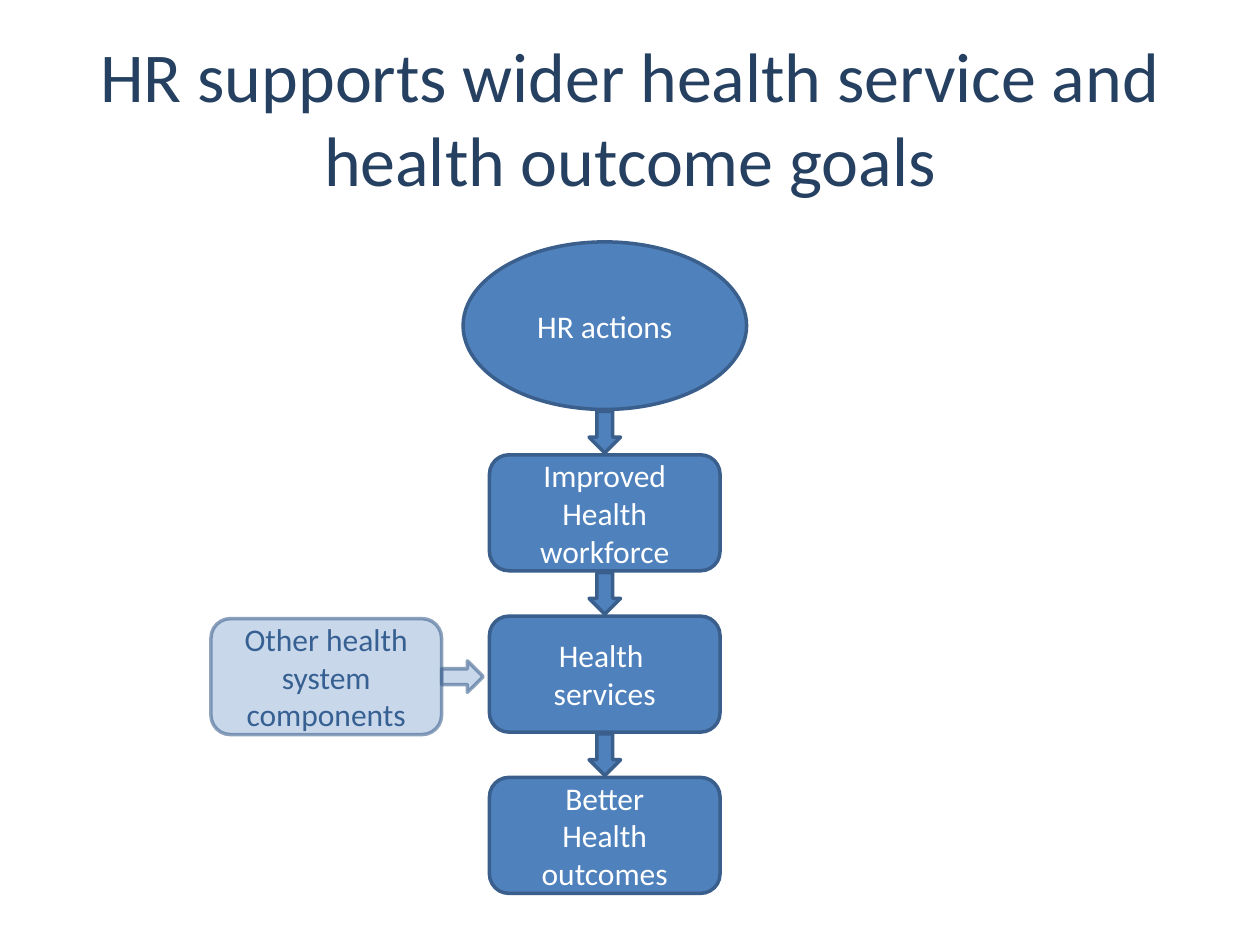
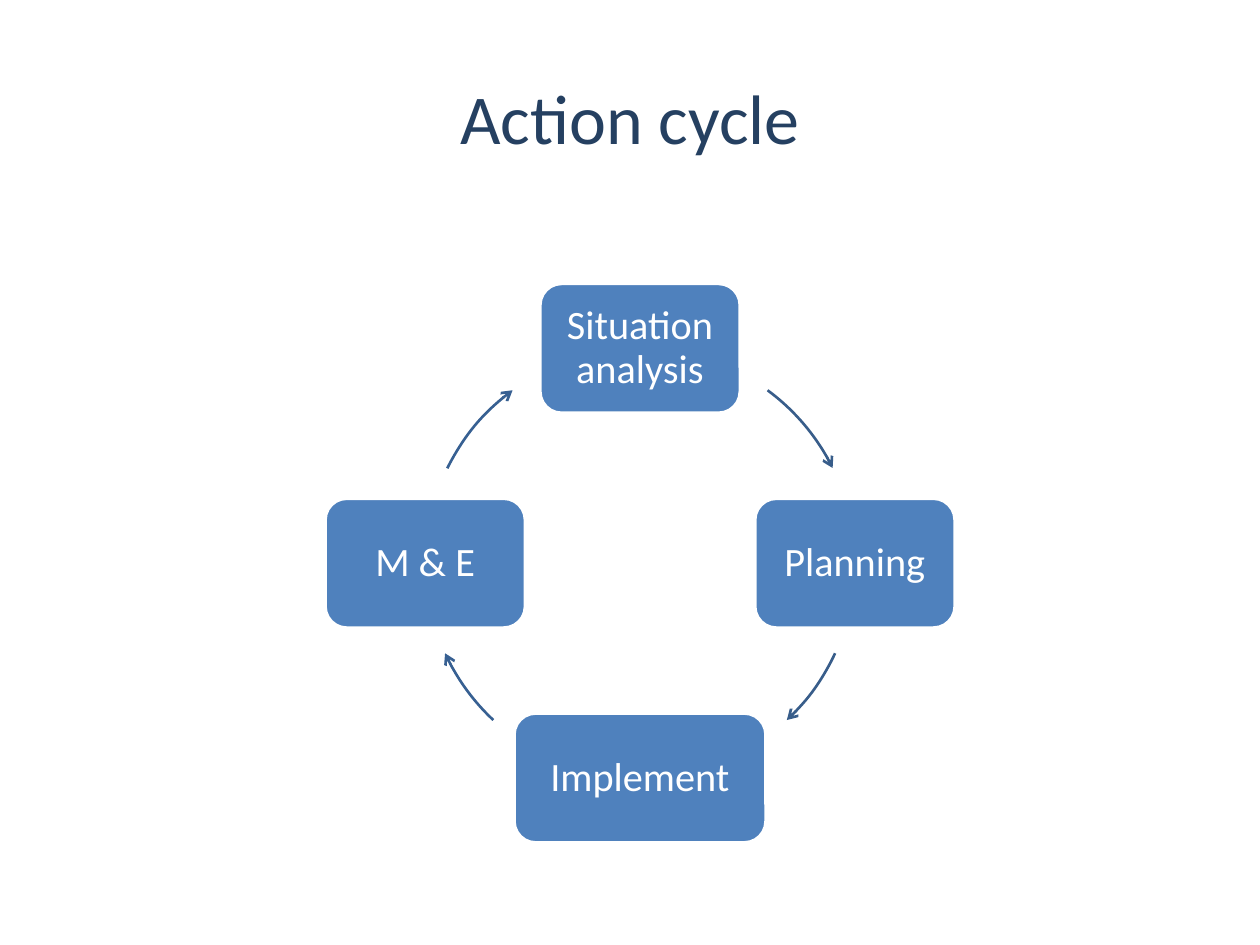
from dataclasses import dataclass

from lxml.etree import SubElement
from pptx import Presentation
from pptx.dml.color import RGBColor
from pptx.enum.shapes import MSO_SHAPE
from pptx.enum.text import MSO_ANCHOR, PP_ALIGN
from pptx.oxml.ns import qn
from pptx.util import Inches, Pt


@dataclass(frozen=True)
class Theme:
    """Colours and type sizes shared by the slides."""
    font: str = "Calibri"
    title: str = "254061"
    fill: str = "4F81BD"
    outline: str = "3A5F8C"
    side_outline: str = "385D8A"
    side_text: str = "376092"
    white: str = "FFFFFF"
    title_size: int = 40
    flow_size: int = 18
    cycle_size: int = 23


T = Theme()

# Content
FLOW_TITLE = "HR supports wider health service and health outcome goals"
FLOW_START = "HR actions"
FLOW_STEPS = ["Improved\nHealth\nworkforce", "Health \nservices", "Better\nHealth\noutcomes"]
SIDE_INPUT, SIDE_ROW = "Other health system components", 1

CYCLE_TITLE = "Action cycle"
# label, direction from the centre (x, y), box width,
# arrow to the next step (start and end in degrees, clockwise from east), arrow colour
CYCLE_STEPS = [
    ("Situation analysis", (0, -1), 1.59, (306.4, 333.7), T.side_outline),
    ("Planning", (1, 0), 1.59, (24.8, 46.9), T.side_outline),
    ("Implement", (0, 1), 2.0, (133.1, 155.2), T.side_text),
    ("M & E", (-1, 0), 1.59, (206.2, 233.6), T.side_text),
]

# Geometry in inches
FLOW_X, OVAL_Y, OVAL_W, OVAL_H = 4.8, 1.92, 2.25, 1.33
BOX_W, BOX_H, ROW_TOP, ROW_PITCH = 1.83, 0.92, 3.61, 1.28
ARROW_W, ARROW_H = 0.25, 0.33
SIDE_X, SIDE_ARROW_X, SIDE_DROP = 2.59, 3.67, 0.02
CYCLE_X, CYCLE_Y, CYCLE_R, CYCLE_BOX_H = 5.08, 4.47, 1.705, 1.03


def rgb(value):
    """Turn a hex string into a colour."""
    return RGBColor.from_string(value)


def format_text(tf, size, color):
    """Centre all paragraphs and set their font."""
    tf.word_wrap = True
    tf.vertical_anchor = MSO_ANCHOR.MIDDLE
    for p in tf.paragraphs:
        p.alignment = PP_ALIGN.CENTER
        for r in p.runs:
            r.font.name, r.font.size = T.font, Pt(size)
            r.font.color.rgb = rgb(color)


def add_centred(s, kind, x, y, w, h, fill=T.fill, line=T.outline, width=2):
    """Add a preset shape centred on x, y."""
    sp = s.shapes.add_shape(kind, Inches(x - w / 2), Inches(y - h / 2), Inches(w), Inches(h))
    sp.shadow.inherit = False
    if fill:
        sp.fill.solid()
        sp.fill.fore_color.rgb = rgb(fill)
    else:
        sp.fill.background()
    sp.line.color.rgb = rgb(line)
    sp.line.width = Pt(width)
    return sp


def label(sp, text, size, color=T.white):
    """Write text in a shape."""
    sp.text_frame.text = text
    format_text(sp.text_frame, size, color)


def fade(sp, fill_share=31, line_share=56):
    """Make the fill and line of a shape partly transparent."""
    props = sp._element.spPr
    line = props.find(qn("a:ln"))
    for parent, share in ((props, fill_share), (line, line_share)):
        color = parent.find(qn("a:solidFill")).find(qn("a:srgbClr"))
        SubElement(color, qn("a:alpha"), val=str(share * 1000))


def add_slide(prs, title):
    """Add a title-only slide with the shared title style."""
    s = prs.slides.add_slide(prs.slide_layouts[5])
    sp = s.shapes.title
    sp.left, sp.top, sp.width, sp.height = Inches(0.5), Inches(0.3), Inches(9), Inches(1.25)
    sp.text_frame.text = title
    format_text(sp.text_frame, T.title_size, T.title)
    return s


def build_flow(prs):
    """Draw the chain from actions to outcomes with its side input."""
    s = add_slide(prs, FLOW_TITLE)
    oval = add_centred(s, MSO_SHAPE.OVAL, FLOW_X, OVAL_Y + OVAL_H / 2, OVAL_W, OVAL_H)
    label(oval, FLOW_START, T.flow_size)
    tops = [ROW_TOP + i * ROW_PITCH for i in range(len(FLOW_STEPS))]
    for top, text in zip(tops, FLOW_STEPS):
        box = add_centred(s, MSO_SHAPE.ROUNDED_RECTANGLE, FLOW_X, top + BOX_H / 2, BOX_W, BOX_H)
        label(box, text, T.flow_size)
    bottoms = [OVAL_Y + OVAL_H] + [top + BOX_H for top in tops]
    for bottom, top in zip(bottoms, tops):
        add_centred(s, MSO_SHAPE.DOWN_ARROW, FLOW_X, (bottom + top) / 2, ARROW_W, ARROW_H)

    y = tops[SIDE_ROW] + BOX_H / 2 + SIDE_DROP
    side = add_centred(s, MSO_SHAPE.ROUNDED_RECTANGLE, SIDE_X, y, BOX_W, BOX_H,
                       line=T.side_outline)
    label(side, SIDE_INPUT, T.flow_size, T.side_text)
    arrow = add_centred(s, MSO_SHAPE.DOWN_ARROW, SIDE_ARROW_X, y, ARROW_W, ARROW_H,
                        line=T.side_outline)
    arrow.rotation = 270
    for sp in (side, arrow):
        fade(sp)


def build_cycle(prs):
    """Draw the steps around a circle, joined by arc arrows."""
    s = add_slide(prs, CYCLE_TITLE)
    for text, (dx, dy), width, angles, color in CYCLE_STEPS:
        box = add_centred(s, MSO_SHAPE.ROUNDED_RECTANGLE, CYCLE_X + dx * CYCLE_R,
                          CYCLE_Y + dy * CYCLE_R, width, CYCLE_BOX_H, line=T.white)
        label(box, text, T.cycle_size)
        tf = box.text_frame
        tf.margin_left = tf.margin_right = Inches(0.05)
        tf.paragraphs[0].line_spacing = 0.9
        arc = add_centred(s, MSO_SHAPE.ARC, CYCLE_X, CYCLE_Y, 2 * CYCLE_R, 2 * CYCLE_R,
                          fill=None, line=color, width=1.5)
        for i, angle in enumerate(angles):
            arc.adjustments[i] = angle * 0.6  # 60000 units a degree, stored per 100000
        SubElement(arc.line._get_or_add_ln(), qn("a:tailEnd"), type="arrow")


prs = Presentation()
prs.slide_width, prs.slide_height = Inches(10), Inches(7.5)
build_flow(prs)
build_cycle(prs)
prs.save("out.pptx")
